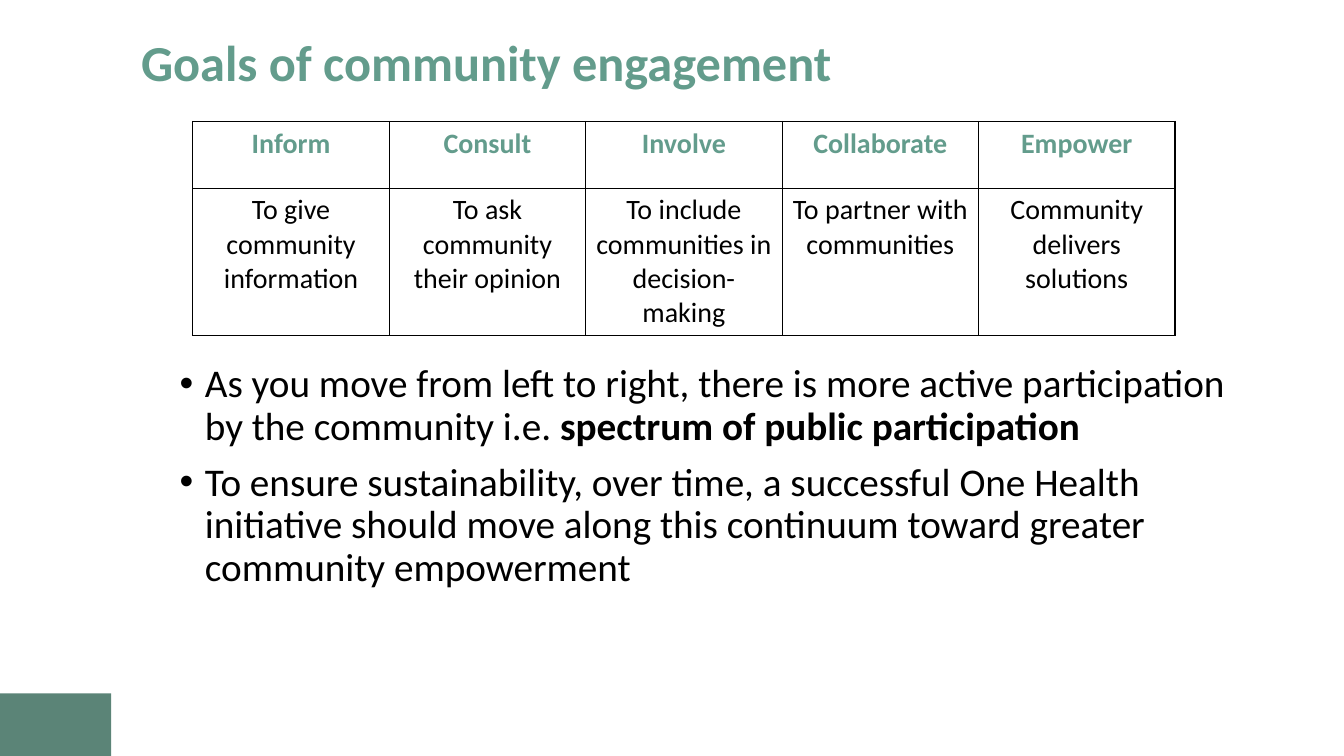
from dataclasses import dataclass

from lxml import etree
from pptx import Presentation
from pptx.dml.color import RGBColor
from pptx.enum import shapes, text
from pptx.oxml import ns
from pptx.util import Cm, Pt

FONT = "Calibri"
GREEN, BLACK, MOSS = "639C8C", "000000", "5B8477"


@dataclass
class Goal:
    name: str
    aim: str


@dataclass
class Point:
    plain: str
    strong: str = ""


GOALS = [
    Goal("Inform", "To give community information"),
    Goal("Consult", "To ask community their opinion"),
    Goal("Involve", "To include communities in decision-making"),
    Goal("Collaborate", "To partner with communities"),
    Goal("Empower", "Community delivers solutions"),
]
POINTS = [
    Point("As you move from left to right, there is more active participation "
          "by the community i.e. ", "spectrum of public participation"),
    Point("To ensure sustainability, over time, a successful One Health "
          "initiative should move along this continuum toward greater "
          "community empowerment"),
]


def color(code: str) -> RGBColor:
    return RGBColor.from_string(code)


def place(shape, left: float, top: float, width: float, height: float) -> None:
    """Move and size a shape, in centimetres."""
    shape.left, shape.top = Cm(left), Cm(top)
    shape.width, shape.height = Cm(width), Cm(height)


def style(para, size: int, code: str, bold: bool = False) -> None:
    font = para.font
    font.name, font.size, font.bold = FONT, Pt(size), bold
    font.color.rgb = color(code)


def child(parent, tag: str, **attrs: str):
    return etree.SubElement(parent, ns.qn(tag), attrs)


def border(cell) -> None:
    """Draw a thin black line on all four sides of a cell."""
    props = cell._tc.get_or_add_tcPr()
    for side in ("a:lnL", "a:lnR", "a:lnT", "a:lnB"):
        fill = child(child(props, side, w=str(Pt(1))), "a:solidFill")
        child(fill, "a:srgbClr", val=BLACK)


def fill_cell(cell, words: str, code: str, bold: bool) -> None:
    border(cell)
    cell.fill.background()
    para = cell.text_frame.paragraphs[0]
    para.text = words
    para.alignment = text.PP_ALIGN.CENTER
    style(para, 20, code, bold)


def add_goals(slide) -> None:
    frame = slide.shapes.add_table(2, len(GOALS), Cm(4.86), Cm(3.06),
                                   Cm(24.75), Cm(5.4))
    table = frame.table
    table.first_row = table.horz_banding = False
    table.rows[0].height, table.rows[1].height = Cm(1.68), Cm(3.72)
    for col, goal in enumerate(GOALS):
        fill_cell(table.cell(0, col), goal.name, GREEN, True)
        fill_cell(table.cell(1, col), goal.aim, BLACK, False)


def add_title(slide) -> None:
    title = slide.shapes.title
    place(title, 3.3, 0.74, 28.22, 1.8)
    frame = title.text_frame
    frame.auto_size = text.MSO_AUTO_SIZE.NONE
    frame.vertical_anchor = text.MSO_ANCHOR.MIDDLE
    para = frame.paragraphs[0]
    para.text = "Goals of community engagement"
    para.alignment = text.PP_ALIGN.LEFT
    para.line_spacing = 0.9
    style(para, 36, GREEN, True)


def add_points(slide) -> None:
    body = slide.placeholders[1]
    place(body, 4.27, 9.04, 27.25, 8.13)
    frame = body.text_frame
    frame.auto_size = text.MSO_AUTO_SIZE.NONE
    for num, point in enumerate(POINTS):
        para = frame.add_paragraph() if num else frame.paragraphs[0]
        props = para._p.get_or_add_pPr()
        props.set("marL", str(Cm(0.64)))
        props.set("indent", str(-Cm(0.64)))
        child(props, "a:buFont", typeface="Arial")
        child(props, "a:buChar", char="•")
        para.line_spacing = 0.9
        para.space_before = Pt(10 if num else 0)
        style(para, 28, BLACK)
        para.add_run().text = point.plain
        if point.strong:
            run = para.add_run()
            run.text = point.strong
            run.font.bold = True


def add_block(slide) -> None:
    block = slide.shapes.add_shape(shapes.MSO_SHAPE.RECTANGLE, Cm(0),
                                   Cm(17.47), Cm(2.8), Cm(1.58))
    block.shadow.inherit = False
    block.fill.solid()
    block.fill.fore_color.rgb = color(MOSS)
    block.line.fill.background()


def main() -> None:
    deck = Presentation()
    deck.slide_width, deck.slide_height = Cm(33.87), Cm(19.05)
    slide = deck.slides.add_slide(deck.slide_layouts[1])
    add_block(slide)
    add_title(slide)
    add_points(slide)
    add_goals(slide)
    deck.save("out.pptx")


if __name__ == "__main__":
    main()
